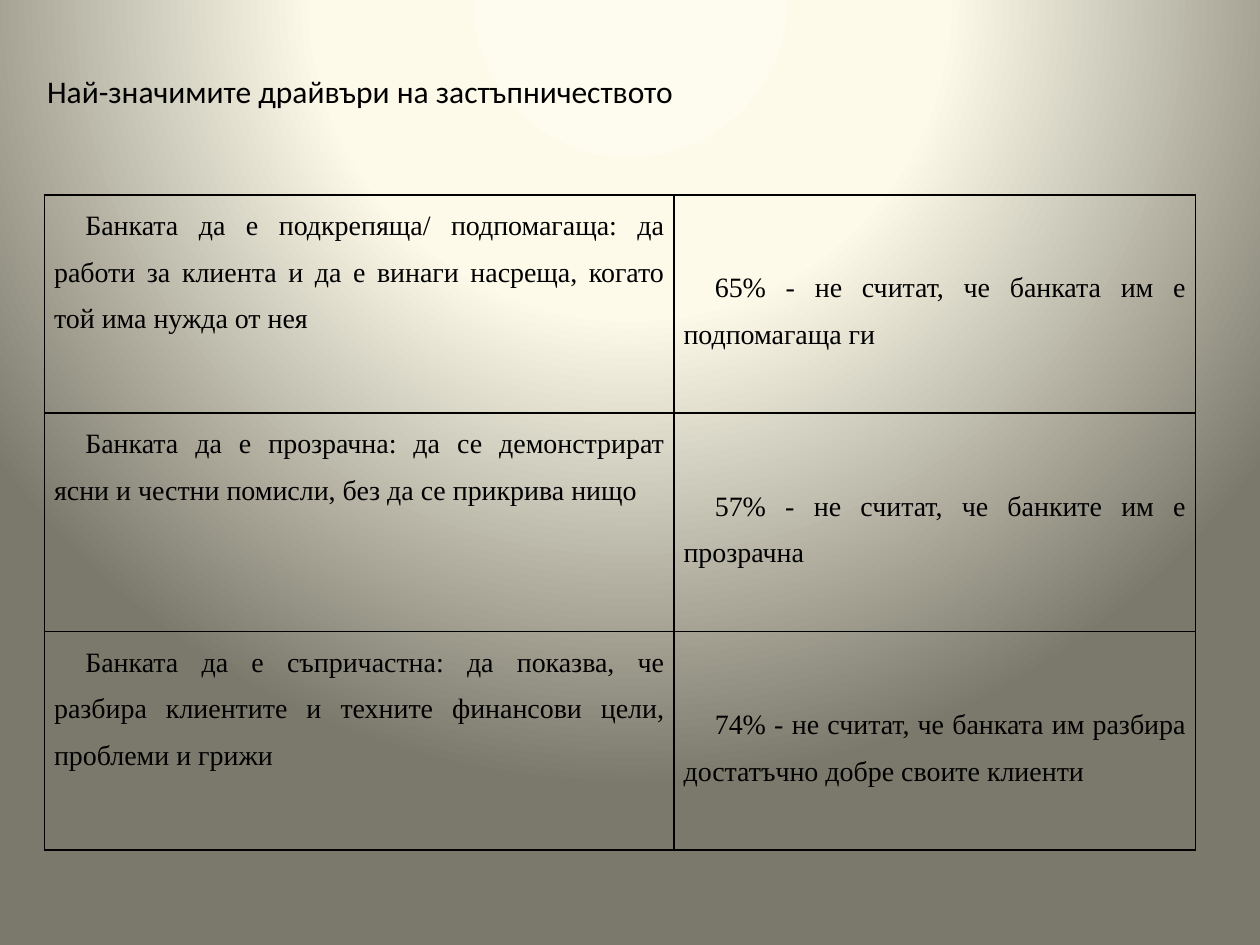
from lxml import etree
from pptx import Presentation
from pptx import util as u
from pptx.dml.color import RGBColor
from pptx.enum import text
from pptx.oxml import ns

COLORS = {
    "ink": "000000",
    "glow": "FEFCEE",
    "cream": "FDFAEA",
    "olive": "7B796B",
}


def write_text(frame, content, font="Calibri", size=18, color="ink",
               align=None, indent=None, line_spacing=None):
    """Fill a text frame with one formatted paragraph."""
    paragraph = frame.paragraphs[0]
    paragraph.text = content
    paragraph.alignment = align
    paragraph.line_spacing = line_spacing
    if indent is not None:
        properties = paragraph._p.get_or_add_pPr()
        properties.set("marL", "0")
        properties.set("indent", str(indent))
    paragraph.font.name = font
    paragraph.font.size = u.Pt(size)
    paragraph.font.color.rgb = RGBColor.from_string(COLORS[color])


def add_element(parent, tag, **attributes):
    return etree.SubElement(parent, ns.qn(tag), **attributes)


class SlideBuilder:
    body = dict(font="Times New Roman", size=16, line_spacing=1.5,
                align=text.PP_ALIGN.JUSTIFY, indent=u.Cm(0.63))
    border_width = u.Pt(1)
    cell_margin = u.Cm(0.19)

    def __init__(self, slide):
        self.slide = slide

    def background(self, stops, focus):
        """Circular gradient; stops are (percent, colour) pairs."""
        self.slide.background.fill.gradient()
        gradient = self.slide.element.find(".//" + ns.qn("a:gradFill"))
        for child in list(gradient):
            gradient.remove(child)
        stop_list = add_element(gradient, "a:gsLst")
        for percent, color in stops:
            stop = add_element(stop_list, "a:gs", pos=str(percent * 1000))
            add_element(stop, "a:srgbClr", val=COLORS[color])
        circle = add_element(gradient, "a:path", path="circle")
        add_element(circle, "a:fillToRect",
                    **{side: str(percent * 1000) for side, percent in focus.items()})

    def title(self, content, left, top, width, height):
        box = self.slide.shapes.add_textbox(left, top, width, height)
        box.text_frame.word_wrap = True
        box.text_frame.auto_size = text.MSO_AUTO_SIZE.SHAPE_TO_FIT_TEXT
        write_text(box.text_frame, content)

    def borders(self, cell):
        properties = cell._tc.get_or_add_tcPr()
        for side in ("a:lnL", "a:lnR", "a:lnT", "a:lnB"):
            line = add_element(properties, side, w=str(self.border_width))
            fill = add_element(line, "a:solidFill")
            add_element(fill, "a:srgbClr", val=COLORS["ink"])

    def table(self, rows, left, top, column_widths, row_height):
        frame = self.slide.shapes.add_table(
            len(rows), len(column_widths), left, top,
            sum(column_widths), row_height * len(rows))
        table = frame.table
        table.first_row = table.horz_banding = False
        for column, width in zip(table.columns, column_widths):
            column.width = width
        anchors = (text.MSO_ANCHOR.TOP, text.MSO_ANCHOR.MIDDLE)
        for row, contents in zip(table.rows, rows):
            row.height = row_height
            for cell, content, anchor in zip(row.cells, contents, anchors):
                cell.margin_left = cell.margin_right = self.cell_margin
                cell.margin_top = cell.margin_bottom = 0
                cell.vertical_anchor = anchor
                self.borders(cell)
                cell.fill.background()
                write_text(cell.text_frame, content, **self.body)


def main():
    presentation = Presentation()
    presentation.slide_width, presentation.slide_height = u.Cm(25.4), u.Cm(19.05)
    builder = SlideBuilder(presentation.slides.add_slide(presentation.slide_layouts[6]))

    # Background
    builder.background([(0, "glow"), (40, "cream"), (100, "olive")],
                       dict(l=50, t=-80, r=50, b=180))

    # Drivers and the share of clients who disagree
    drivers = [
        ("Банката да е подкрепяща/ подпомагаща: да работи за клиента и да е "
         "винаги насреща, когато той има нужда от нея",
         "65% - не считат, че банката им е подпомагаща ги"),
        ("Банката да е прозрачна: да се демонстрират ясни и честни помисли, "
         "без да се прикрива нищо",
         "57% - не считат, че банките им е прозрачна"),
        ("Банката да е съпричастна: да показва, че разбира клиентите и техните "
         "финансови цели, проблеми и грижи",
         "74% - не считат, че банката им разбира достатъчно добре своите клиенти"),
    ]
    builder.table(drivers, u.Cm(0.9), u.Cm(3.93),
                  (u.Cm(12.69), u.Cm(10.51)), u.Cm(4.4))

    # Title
    builder.title("Най-значимите драйвъри на застъпничеството",
                  u.Cm(0.7), u.Cm(1.32), u.Cm(18.6), u.Cm(1.02))

    presentation.save("out.pptx")


if __name__ == "__main__":
    main()
